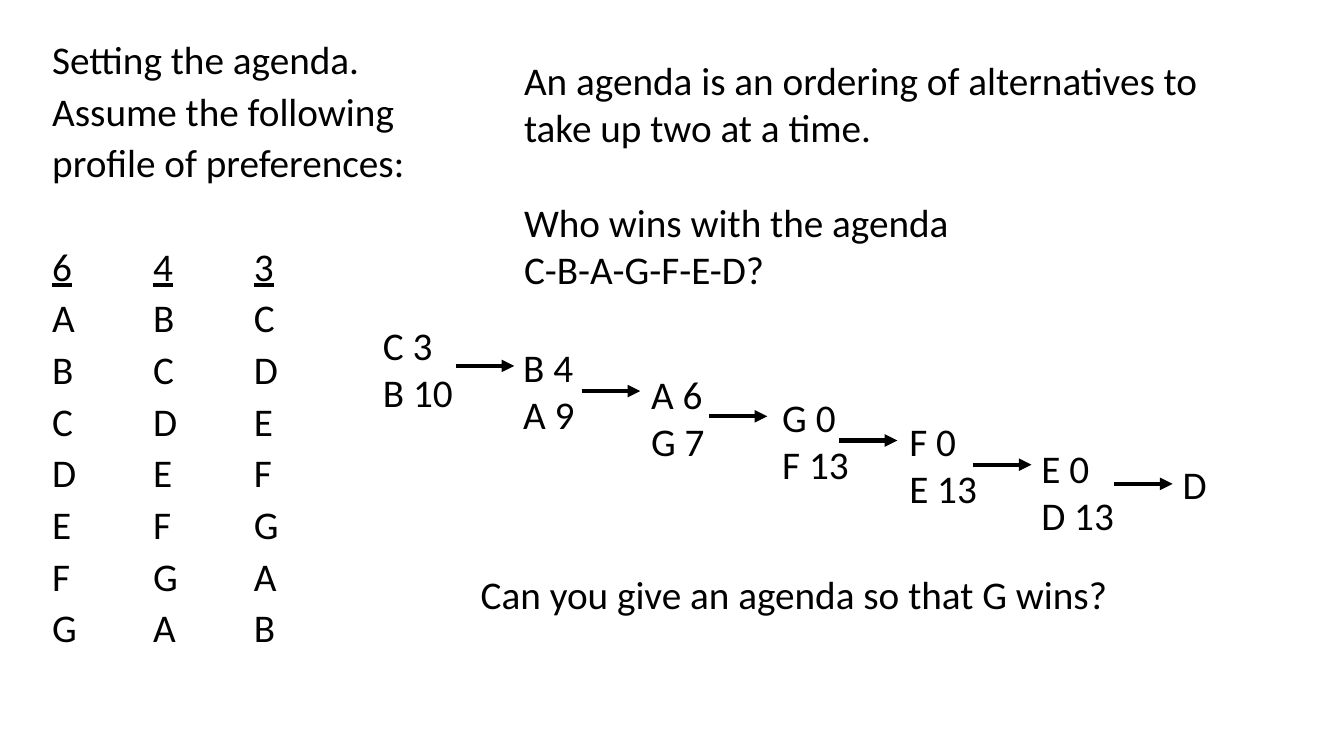
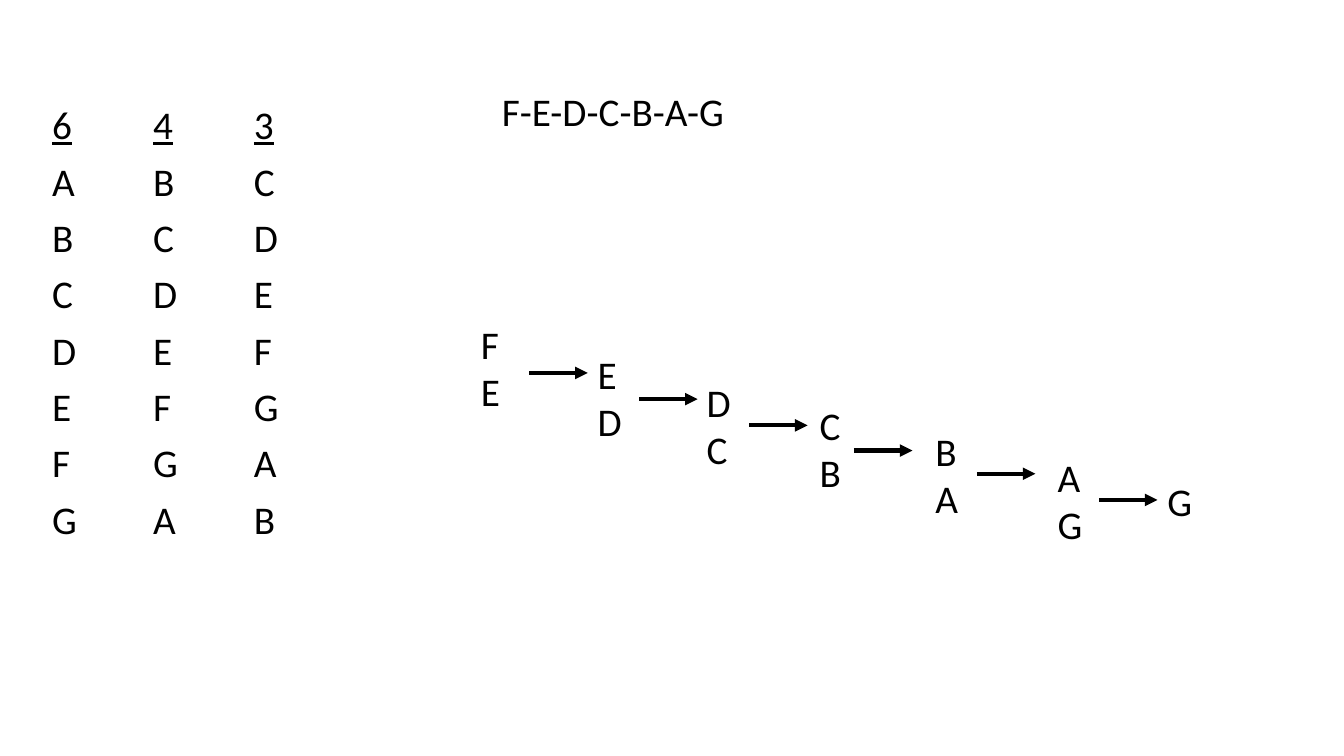
from lxml import etree
from pptx import Presentation
from pptx.dml.color import RGBColor
from pptx.enum.shapes import MSO_CONNECTOR
from pptx.enum.text import MSO_ANCHOR, MSO_AUTO_SIZE
from pptx.oxml.ns import qn
from pptx.util import Emu, Pt

PX = 9144  # EMU per px, 100 px to the inch
BLACK = RGBColor(0, 0, 0)
WHITE = RGBColor(255, 255, 255)
STRAIGHT = MSO_CONNECTOR.STRAIGHT
TOP = MSO_ANCHOR.TOP
FIT_SHAPE = MSO_AUTO_SIZE.SHAPE_TO_FIT_TEXT
NO_FIT = MSO_AUTO_SIZE.NONE

TEXT_FORMAT = {"name": "Calibri", "size": Pt(28)}
LINE_HEIGHT = 47
BOX_PADDING = 10
TAB_WIDTH = 100
ARROW_LENGTH = 58

VOTERS = ["6", "4", "3"]
ALTERNATIVES = "ABCDEFG"


def px(length):
    return Emu(length * PX)


def add_run(paragraph, text, underline=False):
    run = paragraph.add_run()
    run.text = text
    for name, value in {**TEXT_FORMAT, "underline": underline}.items():
        setattr(run.font, name, value)
    run.font.color.rgb = BLACK


def add_text_frame(slide, box, auto_size):
    frame = slide.shapes.add_textbox(*map(px, box)).text_frame
    settings = {"word_wrap": True, "auto_size": auto_size, "vertical_anchor": TOP}
    for name, value in settings.items():
        setattr(frame, name, value)
    return frame


def paragraphs_of(frame, count):
    """Yield the given number of paragraphs, starting with the existing one."""
    yield frame.paragraphs[0]
    for _ in range(count - 1):
        yield frame.add_paragraph()


def add_text(slide, left, top, width, lines, gap_before=None):
    """Place lines in a box; gap_before is the line preceded by an empty line's height."""
    line_count = len(lines)
    box = (left, top, width, BOX_PADDING + LINE_HEIGHT * line_count)
    frame = add_text_frame(slide, box, FIT_SHAPE)
    for index, paragraph in enumerate(paragraphs_of(frame, line_count)):
        if index == gap_before:
            paragraph.space_before = Pt(34)
        add_run(paragraph, lines[index])


def add_tab_stops(paragraph, count):
    properties = paragraph._p.get_or_add_pPr()
    tab_list = etree.SubElement(properties, qn("a:tabLst"))
    for number in range(1, count + 1):
        position = str(number * TAB_WIDTH * PX)
        etree.SubElement(tab_list, qn("a:tab"), pos=position, algn="l")


def preference_rows():
    """Each group of voters ranks the alternatives one step further round."""
    rankings = [ALTERNATIVES[shift:] + ALTERNATIVES[:shift]
                for shift in range(len(VOTERS))]
    return [VOTERS, *zip(*rankings)]


def add_profile(slide, box, line_spacing, introduction=()):
    rows = [[line] for line in introduction] + preference_rows()
    frame = add_text_frame(slide, box, NO_FIT)
    for index, paragraph in enumerate(paragraphs_of(frame, len(rows))):
        row = rows[index]
        is_header = row is VOTERS
        add_tab_stops(paragraph, len(VOTERS) - 1)
        paragraph.line_spacing = line_spacing
        if index:
            paragraph.space_before = Pt(47 if is_header else 10)
        for column, text in enumerate(row):
            if column:
                add_run(paragraph, "\t")
            add_run(paragraph, text, is_header)


def add_arrow(slide, left, top):
    arrow = slide.shapes.add_connector(
        STRAIGHT, px(left), px(top), px(left + ARROW_LENGTH), px(top))
    arrow.line.color.rgb = BLACK
    arrow.line.width = Pt(3)
    etree.SubElement(arrow.line._get_or_add_ln(), qn("a:tailEnd"), type="triangle")
    etree.SubElement(arrow._element.spPr, qn("a:effectLst"))


def add_contests(slide, contests, arrows):
    """Place the pairwise votes and the arrows that lead to the winner."""
    for contest in contests:
        add_text(slide, *contest)
    for arrow in arrows:
        add_arrow(slide, *arrow)


def add_slide(presentation):
    slide = presentation.slides.add_slide(presentation.slide_layouts[6])
    slide.background.fill.solid()
    slide.background.fill.fore_color.rgb = WHITE
    return slide


def build_agenda_slide(presentation):
    slide = add_slide(presentation)
    add_profile(slide, (42, 39, 386, 662), 0.8, [
        "Setting the agenda.", "Assume the following", "profile of preferences:"])
    add_text(slide, 510, 51, 733, [
        "An agenda is an ordering of alternatives to take up two at a time.",
        "Who wins with the agenda",
        "C-B-A-G-F-E-D?"], gap_before=1)
    contests = [
        (370, 314, 99, ["C 3", "B 10"]),
        (509, 336, 77, ["B 4", "A 9"]),
        (636, 362, 77, ["A 6", "G 7"]),
        (766, 385, 94, ["G 0", "F 13"]),
        (892, 409, 94, ["F 0", "E 13"]),
        (1023, 436, 94, ["E 0", "D 13"]),
        (1163, 452, 51, ["D"]),
    ]
    arrows = [(452, 363), (577, 388), (703, 413),
              (832, 437), (965, 461), (1105, 480)]
    add_contests(slide, contests, arrows)
    add_text(slide, 467, 561, 706, ["Can you give an agenda so that G wins?"])


def build_answer_slide(presentation):
    slide = add_slide(presentation)
    add_profile(slide, (42, 100, 386, 601), 0.9)
    agenda = "FEDCBAG"
    add_text(slide, 488, 82, 733, ["-".join(agenda)])
    places = [(467, 313), (583, 343), (691, 370), (803, 393),
              (918, 419), (1039, 445), (1148, 469)]
    contests = [(left, top, 51, list(agenda[index:index + 2]))
                for index, (left, top) in enumerate(places)]
    arrows = [(525, 370), (634, 396), (743, 422),
              (847, 447), (969, 470), (1090, 496)]
    add_contests(slide, contests, arrows)


def main():
    presentation = Presentation()
    presentation.slide_width = px(1333)
    presentation.slide_height = px(750)
    build_agenda_slide(presentation)
    build_answer_slide(presentation)
    presentation.save("out.pptx")


if __name__ == "__main__":
    main()
